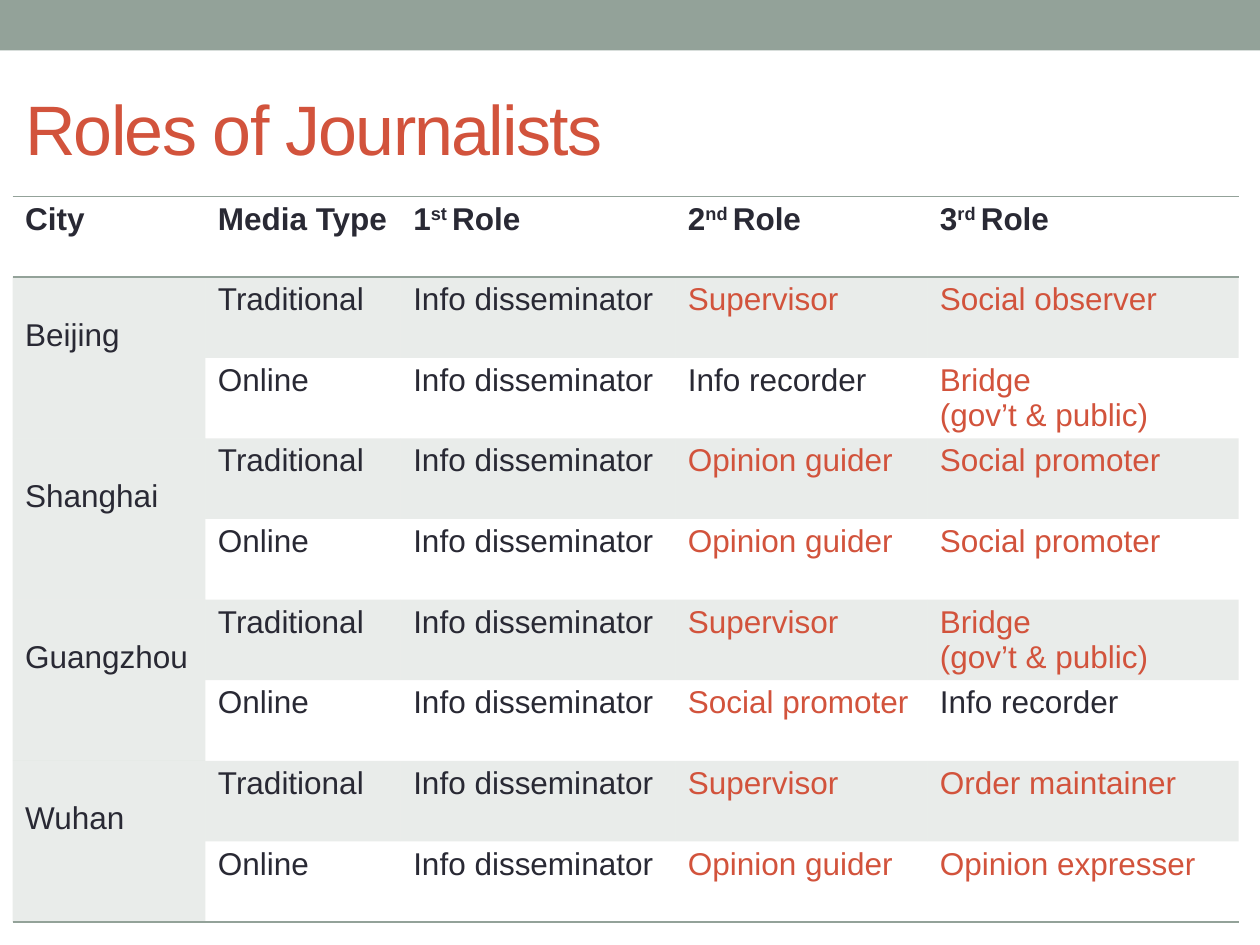
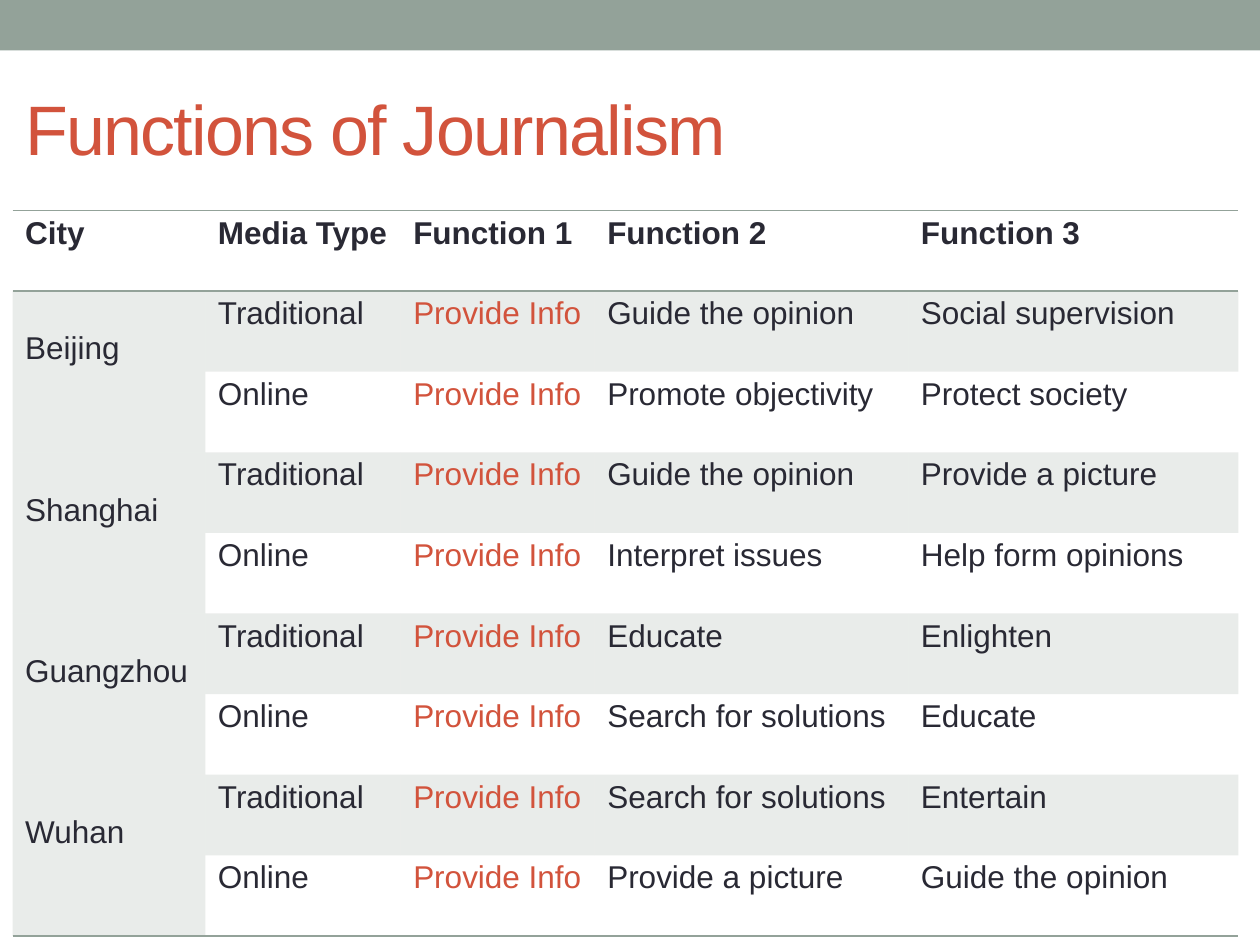
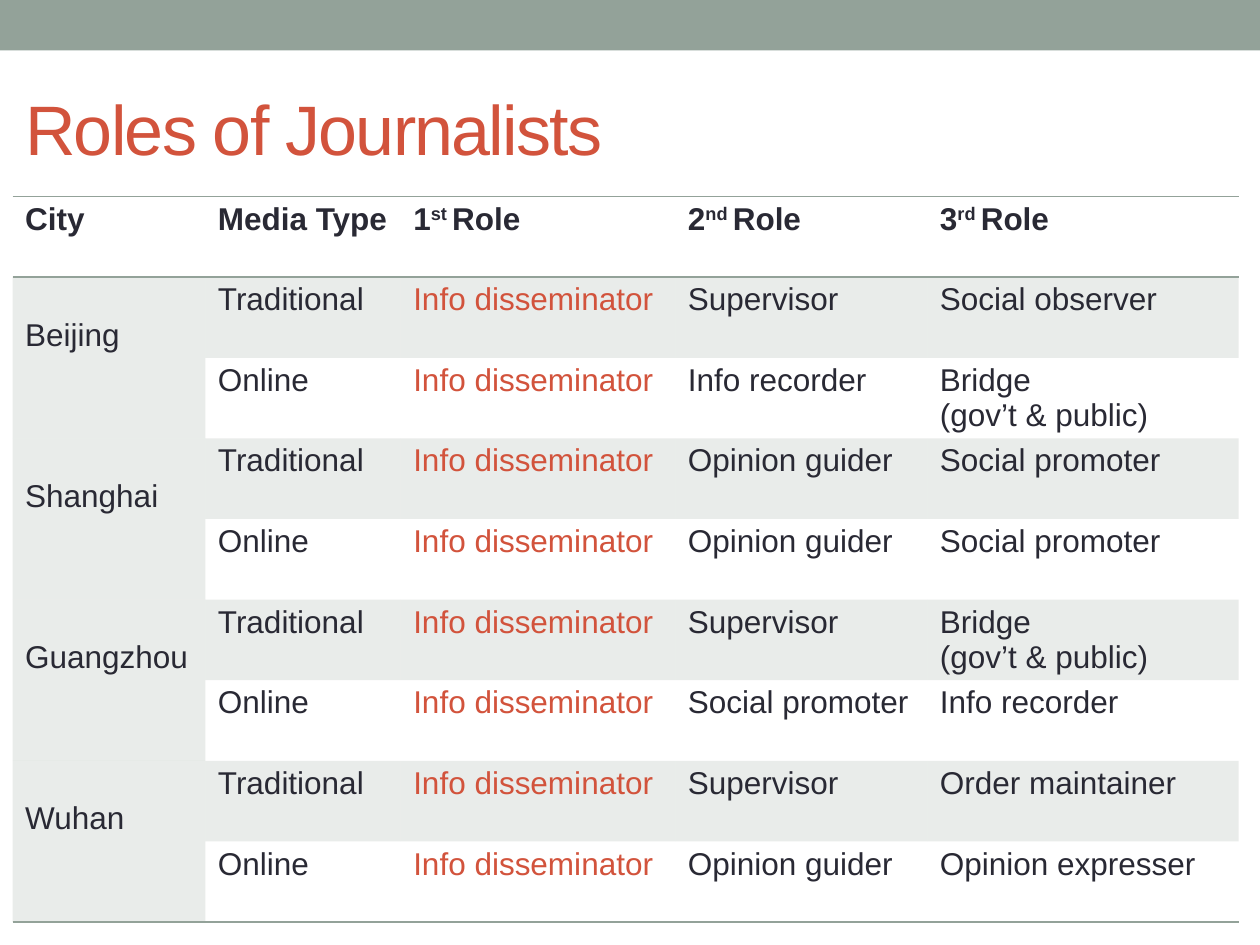
"""Build three slides of tables on journalists' roles and the functions of journalism."""
from lxml.etree import SubElement
from pptx import Presentation
from pptx.dml.color import RGBColor
from pptx.enum.shapes import MSO_SHAPE
from pptx.enum.text import MSO_ANCHOR, PP_ALIGN
from pptx.oxml import parse_xml
from pptx.oxml.ns import nsdecls, qn
from pptx.util import Inches, Pt

SAGE, RUST, INK = "93A299", "D2533C", "292934"
FONT = "Arial"
NO_STYLE = "{2D5ABB26-0587-4C30-8999-92F81FD0307C}"
WIDTH, HEIGHT, BAND_HEIGHT = 10, 7.5, 0.4
TITLE_BOX = (0.1, 0.47, 9, 1.08)
TABLE_LEFT, ROW_HEIGHT = 0.1, 0.64
SIDE_MARGIN, EDGE_MARGIN, CITY_MARGIN = 0.1, 0.04, 0.32

CITIES = ["Beijing", "Shanghai", "Guangzhou", "Wuhan"]
MEDIA = ["Traditional", "Online"]
BRIDGE = "Bridge\n(gov’t & public)"
NEVER_ACCENTED = {"Info recorder"}

ROLES = {
    "title": "Roles of Journalists",
    "top": 1.56,
    "columns": [1.53, 1.55, 2.18, 2, 2.47],
    "headings": ["1^st ^Role", "2^nd ^Role", "3^rd ^Role"],
    "answers": [
        ("Info disseminator", "Supervisor", "Social observer"),
        ("Info disseminator", "Info recorder", BRIDGE),
        ("Info disseminator", "Opinion guider", "Social promoter"),
        ("Info disseminator", "Opinion guider", "Social promoter"),
        ("Info disseminator", "Supervisor", BRIDGE),
        ("Info disseminator", "Social promoter", "Info recorder"),
        ("Info disseminator", "Supervisor", "Order maintainer"),
        ("Info disseminator", "Opinion guider", "Opinion expresser"),
    ],
}
FUNCTIONS = {
    "title": "Functions of Journalism",
    "top": 1.67,
    "columns": [1.53, 1.55, 1.54, 2.49, 2.62],
    "headings": ["Function 1", "Function 2", "Function 3"],
    "answers": [
        ("Provide Info", "Guide the opinion", "Social supervision"),
        ("Provide Info", "Promote objectivity", "Protect society"),
        ("Provide Info", "Guide the opinion", "Provide a picture"),
        ("Provide Info", "Interpret issues", "Help form opinions"),
        ("Provide Info", "Educate", "Enlighten"),
        ("Provide Info", "Search for solutions", "Educate"),
        ("Provide Info", "Search for solutions", "Entertain"),
        ("Provide Info", "Provide a picture", "Guide the opinion"),
    ],
}
SLIDES = [(ROLES, {3, 4}), (FUNCTIONS, {2}), (ROLES, {2})]


def color(value):
    return RGBColor.from_string(value)


def add_run(paragraph, text, size, ink, bold=False, **attributes):
    run = paragraph.add_run()
    run.text = text
    font = run.font
    font.name, font.size, font.bold = FONT, Pt(size), bold
    font.color.rgb = color(ink)
    for name, value in attributes.items():
        run._r.get_or_add_rPr().set(name, value)


def write_cell(cell, text, ink, bold):
    for index, line in enumerate(text.split("\n")):
        frame = cell.text_frame
        paragraph = frame.add_paragraph() if index else frame.paragraphs[0]
        for part, piece in enumerate(line.split("^")):
            raised = {"baseline": "30000"} if part % 2 else {}
            add_run(paragraph, piece, 18, ink, bold, **raised)


def paint_cell(cell, shaded, edges):
    properties = cell._tc.get_or_add_tcPr()
    if shaded:
        cell.fill.solid()
        cell.fill.fore_color.rgb = color(SAGE)
        tint = properties.find(".//" + qn("a:srgbClr"))
        SubElement(tint, qn("a:alpha")).set("val", "20000")
    else:
        cell.fill.background()
    for position, edge in enumerate(edges):
        line = parse_xml(
            f'<a:{edge} {nsdecls("a")} w="12700"><a:solidFill>'
            f'<a:srgbClr val="{SAGE}"/></a:solidFill></a:{edge}>')
        properties.insert(position, line)


def add_city_table(slide, content, accented):
    rows = [("City", "Media Type", *content["headings"])]
    for index, answers in enumerate(content["answers"]):
        city, medium = divmod(index, len(MEDIA))
        rows.append(("" if medium else CITIES[city], MEDIA[medium], *answers))
    columns = content["columns"]
    table = slide.shapes.add_table(
        len(rows), len(columns), Inches(TABLE_LEFT), Inches(content["top"]),
        Inches(sum(columns)), Inches(ROW_HEIGHT * len(rows))).table
    table.horz_banding = False
    table._tbl.tblPr.find(qn("a:tableStyleId")).text = NO_STYLE
    for column, width in zip(table.columns, columns):
        column.width = Inches(width)
    for first in range(1, len(rows), len(MEDIA)):
        table.cell(first, 0).merge(table.cell(first + len(MEDIA) - 1, 0))

    last = len(rows) - 1
    for row, texts in enumerate(rows):
        for column, text in enumerate(texts):
            cell = table.cell(row, column)
            is_city = row > 0 and column == 0
            cell.margin_left = cell.margin_right = Inches(SIDE_MARGIN)
            cell.margin_top = Inches(CITY_MARGIN if is_city else EDGE_MARGIN)
            cell.margin_bottom = Inches(EDGE_MARGIN)
            marked = row > 0 and column in accented and text not in NEVER_ACCENTED
            if text:
                write_cell(cell, text, RUST if marked else INK, row == 0)
            closes = row == last or (is_city and row == last - 1)
            edges = ["lnT", "lnB"] if row == 0 else ["lnB"] if closes else []
            paint_cell(cell, is_city or row % 2 == 1, edges)


def add_band(slide, layout):
    band = slide.shapes.add_shape(
        MSO_SHAPE.RECTANGLE, 0, 0, Inches(WIDTH), Inches(BAND_HEIGHT))
    band.shadow.inherit = False
    band.fill.solid()
    band.fill.fore_color.rgb = color(SAGE)
    band.line.fill.background()
    layout.shapes.element.append(band.element)


def add_title(slide, text):
    title = slide.shapes.title
    title.left, title.top, title.width, title.height = map(Inches, TITLE_BOX)
    frame = title.text_frame
    frame.vertical_anchor = MSO_ANCHOR.MIDDLE
    paragraph = frame.paragraphs[0]
    paragraph.alignment = PP_ALIGN.LEFT
    add_run(paragraph, text, 40, RUST, spc="-100")


def main():
    presentation = Presentation()
    presentation.slide_width, presentation.slide_height = Inches(WIDTH), Inches(HEIGHT)
    layout = presentation.slide_layouts.get_by_name("Title Only")
    for index, (content, accented) in enumerate(SLIDES):
        slide = presentation.slides.add_slide(layout)
        if index == 0:
            add_band(slide, layout)
        add_title(slide, content["title"])
        add_city_table(slide, content, accented)
    presentation.save("out.pptx")


if __name__ == "__main__":
    main()
